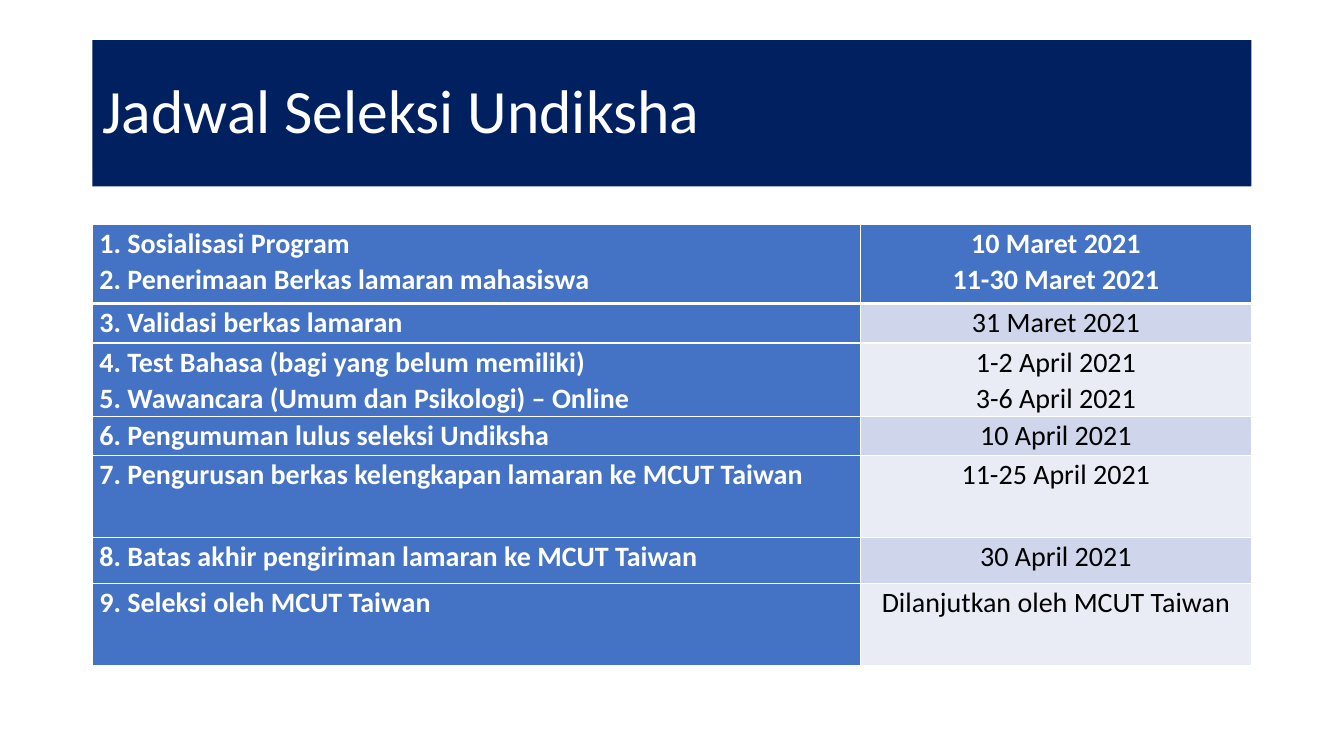
import pptx
import pptx.dml.color
import pptx.enum.shapes
import pptx.enum.text
import pptx.oxml
import pptx.oxml.ns
import pptx.util

Pt = pptx.util.Pt
ALIGN = pptx.enum.text.PP_ALIGN
MIDDLE = pptx.enum.text.MSO_ANCHOR.MIDDLE

TITLE = "Jadwal Seleksi Undiksha"
# activities, dates, row height
SCHEDULE = [
    (["1. Sosialisasi Program", "2. Penerimaan Berkas lamaran mahasiswa"],
     ["10 Maret 2021", "11-30 Maret 2021"], 56.9),
    (["3. Validasi berkas lamaran"], ["31 Maret 2021"], 28.1),
    (["4. Test Bahasa (bagi yang belum memiliki)",
      "5. Wawancara (Umum dan Psikologi) – Online"],
     ["1-2 April 2021", "3-6 April 2021"], 52.6),
    (["6. Pengumuman lulus seleksi Undiksha"], ["10 April 2021"], 28.1),
    (["7. Pengurusan berkas kelengkapan lamaran ke MCUT Taiwan"],
     ["11-25 April 2021"], 58.3),
    (["8. Batas akhir pengiriman lamaran ke MCUT Taiwan"],
     ["30 April 2021"], 33.1),
    (["9. Seleksi oleh MCUT Taiwan"], ["Dilanjutkan oleh MCUT Taiwan"], 58.3),
]
FONT = "Calibri"
NAVY, BLUE, WHITE, BLACK = "002060", "4472C4", "FFFFFF", "000000"
BANDS = ["E9EBF5", "CFD5EA"]
LEFT, WIDTH = 66, 828
TITLE_TOP, TITLE_HEIGHT = 28.75, 104.4
TABLE_TOP = 160
COLUMNS = [548.6, 279.4]


def paint(fill, color):
    fill.solid()
    fill.fore_color.rgb = pptx.dml.color.RGBColor.from_string(color)


def write(tf, lines, size, color, bold, align, spacing):
    tf.text = "\n".join(lines)
    for p in tf.paragraphs:
        p.alignment = align
        p.line_spacing = spacing
        for r in p.runs:
            r.font.name = FONT
            r.font.size = Pt(size)
            r.font.bold = bold
            paint(r.font.fill, color)


def add_border(cell, side, width):
    """Add one white cell border; call before filling the cell."""
    ns = pptx.oxml.ns.nsdecls("a")
    cell._tc.get_or_add_tcPr().append(pptx.oxml.parse_xml(
        f'<a:ln{side} {ns} w="{Pt(width)}"><a:solidFill>'
        f'<a:srgbClr val="{WHITE}"/></a:solidFill></a:ln{side}>'))


def add_title(s):
    sp = s.shapes.add_shape(pptx.enum.shapes.MSO_SHAPE.RECTANGLE, Pt(LEFT),
                            Pt(TITLE_TOP), Pt(WIDTH), Pt(TITLE_HEIGHT))
    sp.shadow.inherit = False
    paint(sp.fill, NAVY)
    sp.line.fill.background()
    sp.text_frame.vertical_anchor = MIDDLE
    write(sp.text_frame, [TITLE], 44, WHITE, False, ALIGN.LEFT, 0.9)


def add_schedule(s):
    height = sum(row[2] for row in SCHEDULE)
    table = s.shapes.add_table(len(SCHEDULE), len(COLUMNS), Pt(LEFT),
                               Pt(TABLE_TOP), Pt(WIDTH), Pt(height)).table
    for column, width in zip(table.columns, COLUMNS):
        column.width = Pt(width)
    for i, (activities, dates, row_height) in enumerate(SCHEDULE):
        table.rows[i].height = Pt(row_height)
        for j, lines in enumerate((activities, dates)):
            cell = table.cell(i, j)
            strong = i == 0 or j == 0
            cell.margin_left = cell.margin_right = Pt(5)
            cell.margin_top = cell.margin_bottom = 0
            for side in "LRTB":
                thick = (i, side) in ((0, "B"), (1, "T"))
                add_border(cell, side, 3 if thick else 1)
            paint(cell.fill, BLUE if strong else BANDS[i % 2])
            write(cell.text_frame, lines, 20, WHITE if strong else BLACK,
                  strong, ALIGN.CENTER if j else ALIGN.LEFT, 1.07)


def main():
    prs = pptx.Presentation()
    prs.slide_width, prs.slide_height = Pt(960), Pt(540)
    s = prs.slides.add_slide(prs.slide_layouts[6])
    add_title(s)
    add_schedule(s)
    prs.save("out.pptx")


if __name__ == "__main__":
    main()
